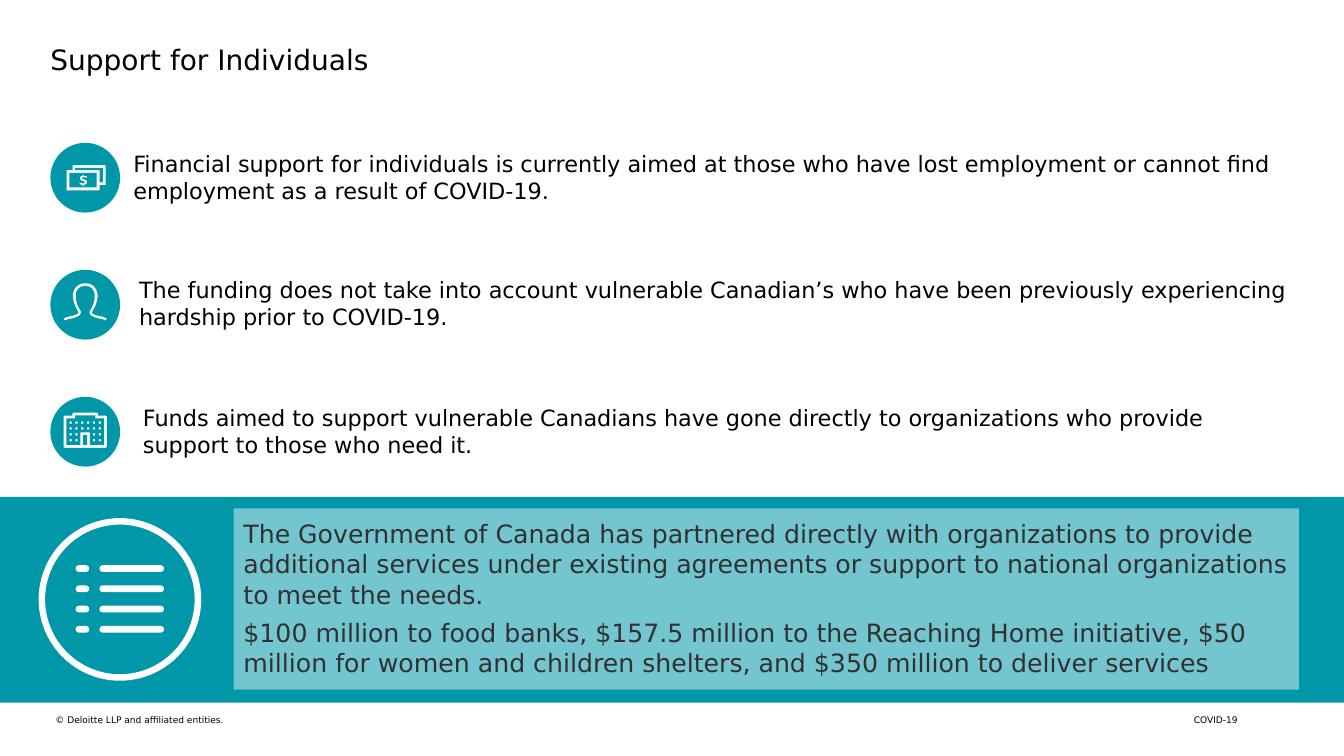
from dataclasses import dataclass
from math import cos, pi, sin

from lxml import etree
from pptx import Presentation
from pptx.dml.color import RGBColor
from pptx.enum.shapes import MSO_SHAPE
from pptx.enum.text import MSO_ANCHOR, PP_ALIGN
from pptx.oxml.ns import qn
from pptx.util import Inches, Pt

RECT, DONUT, PILL = MSO_SHAPE.RECTANGLE, MSO_SHAPE.DONUT, MSO_SHAPE.ROUNDED_RECTANGLE
TOP, MIDDLE = MSO_ANCHOR.TOP, MSO_ANCHOR.MIDDLE
LEFT, RIGHT = PP_ALIGN.LEFT, PP_ALIGN.RIGHT

FONT = "DejaVu Sans"
TEAL, WHITE, BLACK, GREY = "0097A9", "FFFFFF", "000000", "313131"

# Grid of square cells, ten to the inch
COLS, ROWS = 133.33, 75
ICON_X, ICON_Y, ICON_STEP, ICON_RADIUS = 8.46, 17.63, 12.6, 3.46

Contour = list[tuple[float, float]]


@dataclass
class Box:
    x: float
    y: float
    w: float
    h: float


@dataclass
class Point:
    text: str
    box: Box
    icon: list[Contour]
    inset_x: float = 0
    inset_y: float = 0


def mirrored(half: Contour) -> Contour:
    return half + [(-x, y) for x, y in reversed(half) if x]


def circle(cx: float, cy: float, radius: float, sides: int) -> Contour:
    angles = [2 * pi * i / sides for i in range(sides)]
    return [(cx + radius * cos(a), cy + radius * sin(a)) for a in angles]


# Icon contours, measured from the icon centre; each nested one turns the fill over
BANKNOTES = [(-1.85, -0.75), (-1.25, -0.75), (-1.25, -1.25), (2.02, -1.25), (2.02, 0.75),
             (1.42, 0.75), (1.42, 1.25), (-1.85, 1.25)]
FRONT_NOTE = [(-1.57, -0.47), (1.13, -0.47), (1.13, 0.97), (-1.57, 0.97)]
BACK_NOTE = [(-1, -0.75), (-1, -0.97), (1.75, -0.97), (1.75, 0.47), (1.42, 0.47),
             (1.42, -0.75)]
DOLLAR = [(-0.45, -0.15), (-0.25, -0.2), (-0.25, -0.3), (-0.15, -0.3), (-0.15, -0.2),
          (0.15, -0.15), (0.15, 0.02), (-0.15, -0.05), (-0.28, -0.03), (-0.3, 0.1),
          (-0.15, 0.15), (0.12, 0.25), (0.2, 0.45), (0.1, 0.65), (-0.15, 0.72),
          (-0.15, 0.85), (-0.25, 0.85), (-0.25, 0.72), (-0.55, 0.65), (-0.55, 0.47),
          (-0.25, 0.57), (-0.05, 0.52), (-0.05, 0.4), (-0.25, 0.33), (-0.45, 0.25),
          (-0.55, 0.05)]
PERSON_OUTER = [(-2.15, 1.35), (-1.75, 1.2), (-1.3, 1.1), (-0.95, 1), (-0.73, 0.88),
                (-0.68, 0.75), (-0.75, 0.6), (-0.95, 0.25), (-1.12, -0.2), (-1.22, -0.65),
                (-1.22, -1.1), (-1.1, -1.5), (-0.86, -1.83), (-0.5, -2.07), (0, -2.13)]
PERSON_INNER = [(-2.05, 1.57), (-1.72, 1.45), (-1.3, 1.36), (-0.9, 1.25), (-0.58, 1.08),
                (-0.42, 0.85), (-0.45, 0.6), (-0.68, 0.22), (-0.85, -0.2), (-0.94, -0.65),
                (-0.94, -1.05), (-0.85, -1.35), (-0.68, -1.6), (-0.4, -1.8), (0, -1.86)]
WALL_OUTER = [(-2.05, 1.6), (-2.15, 1.5), (-2.15, -1.5), (-2.05, -1.6), (-1.27, -1.6),
              (-1.27, -1.8), (-1.17, -1.9)]
WALL_INNER = [(-0.47, 0.08), (-0.47, 1.3), (-1.88, 1.3), (-1.88, -1.33), (-1, -1.33),
              (-1, -1.63)]
DOOR = [(-0.2, 1.3), (-0.2, 0.35)]
WINDOWS = [circle((col - 2.5) * 0.58, row * 0.58 - 0.9, 0.14, 6)
           for row in range(4) for col in range(6)
           if row < 2 or col not in (2, 3)]  # the door takes the middle

MONEY_ICON = [BANKNOTES, FRONT_NOTE, BACK_NOTE, DOLLAR]
PERSON_ICON = [mirrored(PERSON_OUTER) + mirrored(PERSON_INNER)[::-1]]
BUILDING_ICON = [mirrored(WALL_OUTER), mirrored(WALL_INNER), mirrored(DOOR), *WINDOWS]

POINTS = [
    Point("Financial support for individuals is currently aimed at those who have lost "
          "employment or cannot find employment as a result of COVID-19.",
          Box(13.23, 14.9, 115.6, 5.6), MONEY_ICON),
    Point("The funding does not take into account vulnerable Canadian’s who have been "
          "previously experiencing hardship prior to COVID-19.",
          Box(13.8, 27.4, 114.5, 5.6), PERSON_ICON),
    Point("Funds aimed to support vulnerable Canadians have gone directly to organizations "
          "who provide support to those who need it.",
          Box(13.2, 39.6, 114.5, 5.6), BUILDING_ICON, 1, 0.5),
]
PARTNERSHIP = [
    "The Government of Canada has partnered directly with organizations to provide "
    "additional services under existing agreements or support to national organizations "
    "to meet the needs.",
    "$100 million to food banks, $157.5 million to the Reaching Home initiative, $50 "
    "million for women and children shelters, and $350 million to deliver services",
]


def cells(n: float) -> int:
    return Inches(n / 10)


def rgb(color: str) -> RGBColor:
    return RGBColor.from_string(color)


def paint(sp, fill: str) -> None:
    sp.shadow.inherit = False
    sp.fill.solid()
    sp.fill.fore_color.rgb = rgb(fill)
    sp.line.fill.background()


def shape(s, kind, box: Box, fill: str):
    sp = s.shapes.add_shape(kind, cells(box.x), cells(box.y), cells(box.w), cells(box.h))
    paint(sp, fill)
    return sp


def write(sp, lines: list[str], size: float, color: str, align=LEFT, anchor=TOP,
          inset_x: float = 0, inset_y: float = 0, gap: float = 0) -> None:
    tf = sp.text_frame
    tf.word_wrap = True
    tf.vertical_anchor = anchor
    tf.margin_left = tf.margin_right = cells(inset_x)
    tf.margin_top = tf.margin_bottom = cells(inset_y)
    for i, line in enumerate(lines):
        p = tf.add_paragraph() if i else tf.paragraphs[0]
        p.text = line
        p.alignment = align
        if i:
            p.space_before = Pt(gap)
        p.font.name, p.font.size, p.font.color.rgb = FONT, Pt(size), rgb(color)


def text(s, box: Box, line: str, size: float, **layout) -> None:
    sp = s.shapes.add_textbox(cells(box.x), cells(box.y), cells(box.w), cells(box.h))
    write(sp, [line], size, BLACK, **layout)


def round_icon(s, cy: float, contours: list[Contour]) -> None:
    disc = circle(0, 0, ICON_RADIUS, 48)
    fb = s.shapes.build_freeform()
    for contour in [disc, *contours]:
        pts = [(cells(ICON_X + x), cells(cy + y)) for x, y in contour]
        fb.move_to(*pts[0])
        fb.add_line_segments(pts[1:], close=True)
    paint(fb.convert_to_shape(), TEAL)


def list_icon(s) -> None:
    for row in range(4):
        for x, w in ((7.5, 1.35), (9.87, 6.4)):
            bar = shape(s, PILL, Box(x, 56.07 + row * 2.01, w, 0.67), WHITE)
            bar.adjustments[0] = 0.5
    ring = shape(s, DONUT, Box(3.83, 51.4, 16.13, 16.13), WHITE)
    ring.adjustments[0] = 0.04


def main() -> None:
    prs = Presentation()
    prs.slide_width, prs.slide_height = cells(COLS), cells(ROWS)
    s = prs.slides.add_slide(prs.slide_layouts[6])

    # Title
    text(s, Box(5, 4.2, 123.3, 3.4), "Support for Individuals", 20)

    # Three points with icons
    for i, point in enumerate(POINTS):
        round_icon(s, ICON_Y + i * ICON_STEP, point.icon)
        text(s, point.box, point.text, 16, inset_x=point.inset_x, inset_y=point.inset_y)

    # Partnership band
    shape(s, RECT, Box(0, 49.3, COLS, 20.4), TEAL)
    panel = shape(s, RECT, Box(23.17, 50.43, 105.7, 18), WHITE)
    fill = panel.fill.fore_color._xFill.find(qn("a:srgbClr"))
    etree.SubElement(fill, qn("a:alpha"), val="45000")
    write(panel, PARTNERSHIP, 18, GREY, inset_x=1, inset_y=1, gap=6)
    list_icon(s)

    # Footer
    text(s, Box(5.5, 70.85, 58.6, 2.2), "© Deloitte LLP and affiliated entities.", 6.5)
    text(s, Box(94.8, 70.8, 28, 1.3), "COVID-19", 6.5, align=RIGHT, anchor=MIDDLE)

    prs.save("out.pptx")


if __name__ == "__main__":
    main()
